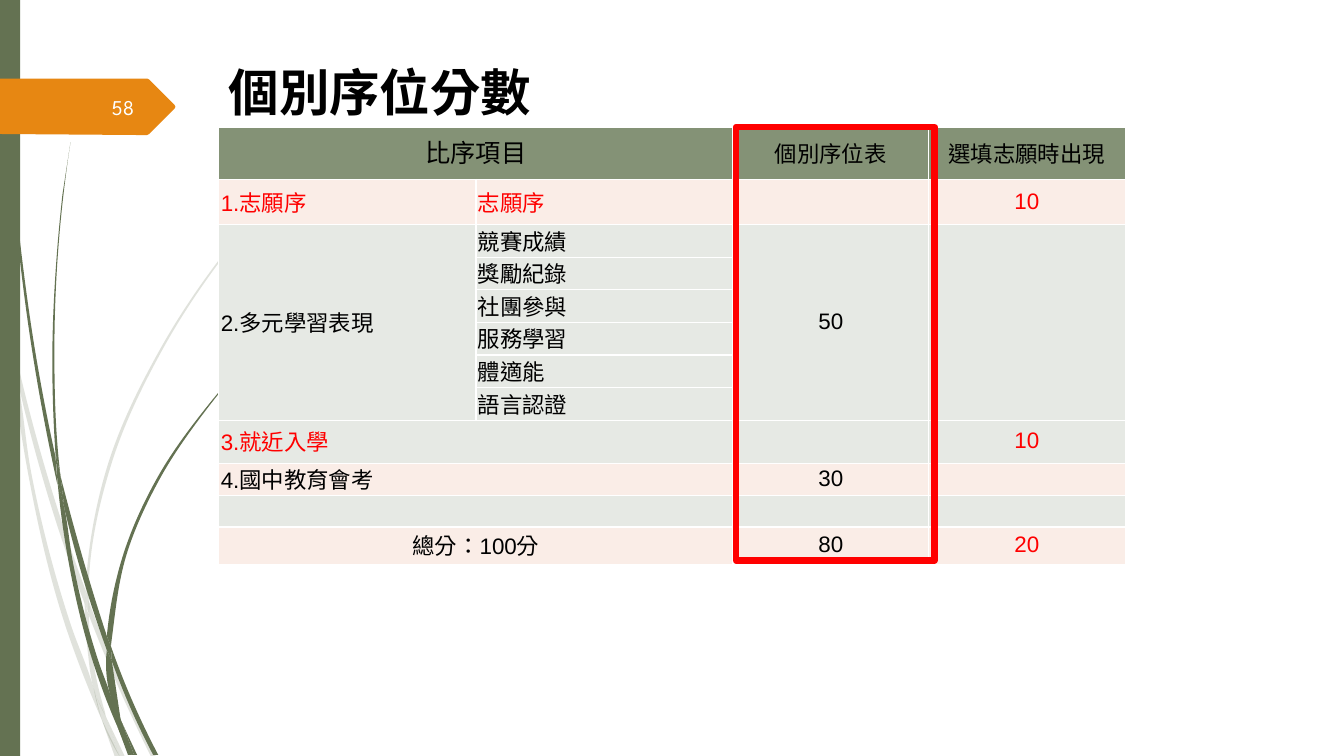
import math

import pptx
import pptx.dml.color
import pptx.enum.lang
import pptx.enum.shapes
import pptx.enum.text
import pptx.oxml
import pptx.oxml.ns
import pptx.util
from pptx.util import Inches

RGBColor = pptx.dml.color.RGBColor
ALIGN = pptx.enum.text.PP_ALIGN
ANCHOR = pptx.enum.text.MSO_ANCHOR
RECTANGLE = pptx.enum.shapes.MSO_SHAPE.RECTANGLE
CHINESE = pptx.enum.lang.MSO_LANGUAGE_ID.TRADITIONAL_CHINESE

MOSS = RGBColor(0x64, 0x72, 0x52)
ORANGE = RGBColor(0xE7, 0x87, 0x12)
HEADER = RGBColor(0x84, 0x92, 0x76)
BLUSH = RGBColor(0xFA, 0xED, 0xE7)
SAGE = RGBColor(0xE6, 0xE9, 0xE4)
RED = RGBColor(0xFF, 0, 0)
BLACK = RGBColor(0, 0, 0)
WHITE = RGBColor(0xFF, 0xFF, 0xFF)
OFF_WHITE = RGBColor(0xFE, 0xFF, 0xFF)
CJK_FONT = "Noto Sans CJK TC"

# Each blade is a pair of edges: out along one side, back along the other.
PALE_BLADES = [
    ([(0.11, 3.5), (0.08, 3.22), (0, 2.82)], [(0, 2.99), (0.1, 3.44)]),
    ([(0.14, 3.45), (0.62, 5.2), (0.85, 5.86)], [(0.84, 5.99), (0.57, 5.22), (0.17, 3.76)]),
    ([(0.88, 5.96), (0.92, 6.07), (1.27, 6.92), (1.55, 7.51)],
     [(1.5, 7.51), (1.23, 6.94), (0.88, 6.1)]),
    ([(1.05, 7.11), (1.24, 7.51)], [(1.19, 7.51)]),
    ([(0.11, 3.5), (0.17, 3.76), (0.31, 4.69), (0.7, 6.19), (0.93, 6.83), (0.99, 7.07)],
     [(1.01, 7.14), (0.92, 6.93), (0.65, 6.21), (0.28, 4.7), (0.11, 3.5)]),
    ([(0.84, 5.99), (0.87, 6.46), (0.93, 6.83), (1.05, 7.11)],
     [(1.04, 7.06), (0.91, 6.46), (0.88, 6.1)]),
    ([(0.88, 5.96), (0.88, 5.84), (1.1, 4.62), (1.6, 3.49), (2.29, 2.45), (2.68, 1.98),
      (3.12, 1.53)],
     [(2.89, 1.75), (2.68, 1.97), (2.28, 2.44), (1.58, 3.48), (1.07, 4.61), (0.85, 5.84)]),
    ([(1.01, 7.14), (1.14, 7.51)], [(1.19, 7.51)]),
    ([(0.88, 6.1), (0.88, 5.96), (0.85, 5.86)], [(0.84, 5.99), (0.88, 6.08)]),
    ([(0.93, 6.83), (1.01, 7.14), (1.19, 7.51)], [(1.05, 7.11), (0.96, 6.92)]),
]
DARK_BLADES = [
    ([(0.03, 0), (0.03, 0.48), (0.07, 1.1), (0.17, 2.33), (0.33, 3.55), (0.57, 4.81)],
     [(0.55, 4.53), (0.36, 3.55), (0.19, 2.32), (0.08, 1.09), (0.05, 0.48), (0.03, 0)]),
    ([(0.64, 5.05), (0.88, 5.92), (1.06, 6.45)], [(1.06, 6.31), (0.93, 5.9), (0.6, 4.72)]),
    ([(1.1, 6.41), (1.36, 7.06), (1.57, 7.49)], [(1.52, 7.49), (1.32, 7.08), (1.11, 6.56)]),
    ([(0.57, 4.77), (0.64, 5.05), (0.72, 5.56), (0.98, 6.57), (1.1, 6.91), (1.16, 7.17)],
     [(1.17, 7.22), (1.11, 7.08), (0.93, 6.59), (0.68, 5.57), (0.57, 4.77)]),
    ([(0.6, 4.72), (0.58, 4.53), (0.54, 3.49), (0.58, 2.45), (0.63, 1.93), (0.7, 1.41)],
     [(0.62, 1.93), (0.57, 2.45), (0.52, 3.49), (0.55, 4.49)]),
    ([(1.22, 7.19), (1.33, 7.49)], [(1.36, 7.49)]),
    ([(0.57, 4.77), (0.64, 5.05)], [(0.6, 4.72), (0.55, 4.49)]),
    ([(1.1, 6.41), (1.11, 6.33), (1.25, 5.52), (1.58, 4.76), (2.05, 4.06), (2.31, 3.74),
      (2.61, 3.44)],
     [(2.45, 3.58), (2.31, 3.73), (2.04, 4.05), (1.56, 4.74), (1.22, 5.51), (1.06, 6.31)]),
    ([(1.17, 7.22), (1.27, 7.49)], [(1.31, 7.49)]),
    ([(1.06, 6.45), (1.1, 6.92), (1.22, 7.19)], [(1.2, 7.16), (1.11, 6.56)]),
    ([(1.06, 6.45), (1.11, 6.56)], [(1.1, 6.41), (1.06, 6.31)]),
    ([(1.1, 6.91), (1.17, 7.22), (1.31, 7.49)], [(1.33, 7.49), (1.22, 7.19)]),
]
ARROW = [(-0.01, 1.33), (0, 0.78), (1.46, 0.78), (1.48, 0.79), (1.73, 1.04), (1.74, 1.06),
         (1.73, 1.08), (1.48, 1.33), (1.46, 1.34), (1.36, 1.34)]

SCORES = [
    ("比序項目", "", "個別序位表", "選填志願時出現"),
    ("1.志願序", "志願序", "", "10"),
    ("2.多元學習表現", "競賽成績", "50", ""),
    ("", "獎勵紀錄", "", ""),
    ("", "社團參與", "", ""),
    ("", "服務學習", "", ""),
    ("", "體適能", "", ""),
    ("", "語言認證", "", ""),
    ("3.就近入學", "", "", "10"),
    ("4.國中教育會考", "", "30", ""),
    ("", "", "", ""),
    ("總分：100分", "", "80", "20"),
]
COLUMN_WIDTHS = [2.55, 2.55, 1.94, 1.95]
ROW_HEIGHTS = [0.52, 0.45] + [1.94 / 6] * 6 + [0.43, 0.32, 0.31, 0.37]
TOTAL_ROW = len(SCORES) - 1
BLUSH_ROWS = (1, 9, TOTAL_ROW)
RED_ROWS = (1, 8)
WIDE_ROWS = (0, 8, 9, 10, TOTAL_ROW)


def curve_through(points):
    """Bezier handles and ends, three for each stretch after the first point."""
    anchors = [complex(*point) for point in points]
    lengths = [abs(b - a) for a, b in zip(anchors, anchors[1:])]
    chords = [(b - a) / n for a, b, n in zip(anchors, anchors[1:], lengths)]
    inner = [(u * n + v * m) / (m + n)
             for u, v, m, n in zip(chords, chords[1:], lengths, lengths[1:])]
    inner = inner or chords
    first = chords[0] ** 2 * inner[0].conjugate()
    last = chords[-1] ** 2 * inner[-1].conjugate()
    tangents = [first, *(inner if len(points) > 2 else []), last]
    handles = []
    for i, n in enumerate(lengths):
        handles += [anchors[i] + tangents[i] * n / 3,
                    anchors[i + 1] - tangents[i + 1] * n / 3, anchors[i + 1]]
    return [(z.real, z.imag) for z in handles]


def paint(shape, color):
    shape.shadow.inherit = False
    shape.fill.solid()
    shape.fill.fore_color.rgb = color
    shape.line.fill.background()


def add_outline(shapes, points, color):
    start, *rest = [(Inches(x), Inches(y)) for x, y in points]
    builder = shapes.build_freeform(*start)
    builder.add_line_segments(rest, close=True)
    outline = builder.convert_to_shape()
    paint(outline, color)
    return outline


def bend(outline):
    """Turn every three line segments into one cubic curve."""
    segments = list(outline._element.iter(pptx.oxml.ns.qn("a:lnTo")))
    for first, second, third in zip(*[iter(segments)] * 3):
        first.tag = pptx.oxml.ns.qn("a:cubicBezTo")
        for extra in (second, third):
            first.append(extra[0])
            extra.getparent().remove(extra)


def add_blades(slide, blades, opacity=None):
    grass = slide.shapes.add_group_shape()
    for out, back in blades:
        joint = [out[-1], back[0], back[0]]
        points = [out[0], *curve_through(out), *joint]
        if len(back) > 1:
            points += curve_through(back)
        blade = add_outline(grass.shapes, points, MOSS)
        bend(blade)
        if opacity:
            color = blade._element.spPr.find(".//" + pptx.oxml.ns.qn("a:srgbClr"))
            color.append(pptx.oxml.parse_xml(
                f'<a:alpha {pptx.oxml.ns.nsdecls("a")} val="{opacity * 1000}"/>'))


def write(paragraph, text, color, size, name, bold=None):
    run = paragraph.add_run()
    run.text = text
    run.font.color.rgb = color
    formats = {"size": pptx.util.Pt(size), "name": name, "bold": bold, "language_id": CHINESE}
    for key, value in formats.items():
        setattr(run.font, key, value)
    run.font._element.append(pptx.oxml.parse_xml(
        f'<a:ea {pptx.oxml.ns.nsdecls("a")} typeface="{CJK_FONT}"/>'))


def add_text(slide, box, align, anchor, *content):
    frame = slide.shapes.add_textbox(*map(Inches, box)).text_frame
    frame.word_wrap = True
    frame.vertical_anchor = anchor
    frame.paragraphs[0].alignment = align
    write(frame.paragraphs[0], *content)


def add_borders(cell):
    properties = cell._tc.get_or_add_tcPr()
    for position, side in enumerate(("lnL", "lnR", "lnT", "lnB")):
        properties.insert(position, pptx.oxml.parse_xml(
            f'<a:{side} {pptx.oxml.ns.nsdecls("a")} w="12700"><a:solidFill>'
            f'<a:srgbClr val="{WHITE}"/></a:solidFill></a:{side}>'))


def fill_cell(cell, text, row, column):
    margins = {"margin_left": Inches(0.02), "margin_right": Inches(0.02),
               "margin_top": 0, "margin_bottom": 0, "vertical_anchor": ANCHOR.MIDDLE}
    for name, value in margins.items():
        setattr(cell, name, value)
    cell.fill.solid()
    cell.fill.fore_color.rgb = HEADER if row == 0 else BLUSH if row in BLUSH_ROWS else SAGE
    add_borders(cell)
    if text:
        paragraph = cell.text_frame.paragraphs[0]
        listed = column < 2 and row not in (0, TOTAL_ROW)
        paragraph.alignment = ALIGN.LEFT if listed else ALIGN.CENTER
        main_heading = row == column == 0
        paragraph.line_spacing = 0.83 if main_heading else 0.94
        red = row in RED_ROWS or (column == 3 and row > 0)
        write(paragraph, text, RED if red else BLACK, 18 if main_heading else 16, "Arial")


def add_score_table(slide):
    table = slide.shapes.add_table(
        len(SCORES), len(COLUMN_WIDTHS), Inches(2.17), Inches(1.26),
        Inches(sum(COLUMN_WIDTHS)), Inches(sum(ROW_HEIGHTS))).table
    for column, width in zip(table.columns, COLUMN_WIDTHS):
        column.width = Inches(width)
    for row, height in zip(table.rows, ROW_HEIGHTS):
        row.height = Inches(height)
    for r, texts in enumerate(SCORES):
        for c, text in enumerate(texts):
            fill_cell(table.cell(r, c), text, r, c)
    for r in WIDE_ROWS:
        table.cell(r, 0).merge(table.cell(r, 1))
    for c in (0, 2, 3):
        table.cell(2, c).merge(table.cell(7, c))


def add_highlight(slide):
    frame = slide.shapes.add_shape(RECTANGLE, *map(Inches, (7.3, 1.26, 1.97, 4.3)))
    frame.shadow.inherit = False
    frame.fill.background()
    frame.line.color.rgb = RED
    frame.line.width = pptx.util.Pt(4.5)


def main():
    deck = pptx.Presentation()
    deck.slide_width, deck.slide_height = Inches(13.33), Inches(7.5)
    slide = deck.slides.add_slide(deck.slide_layouts[6])
    add_blades(slide, PALE_BLADES, opacity=20)
    add_blades(slide, DARK_BLADES)
    paint(slide.shapes.add_shape(RECTANGLE, 0, 0, Inches(0.2), Inches(7.5)), MOSS)
    add_outline(slide.shapes, ARROW, ORANGE)
    add_text(slide, (2.17, 0.56, 9.75, 1.4), ALIGN.LEFT, ANCHOR.TOP,
             "個別序位分數", BLACK, 36, CJK_FONT, True)
    add_score_table(slide)
    add_highlight(slide)
    add_text(slide, (0.58, 0.86, 0.85, 0.4), ALIGN.RIGHT, ANCHOR.MIDDLE,
             "58", OFF_WHITE, 15, "League Spartan")
    deck.save("out.pptx")


if __name__ == "__main__":
    main()
